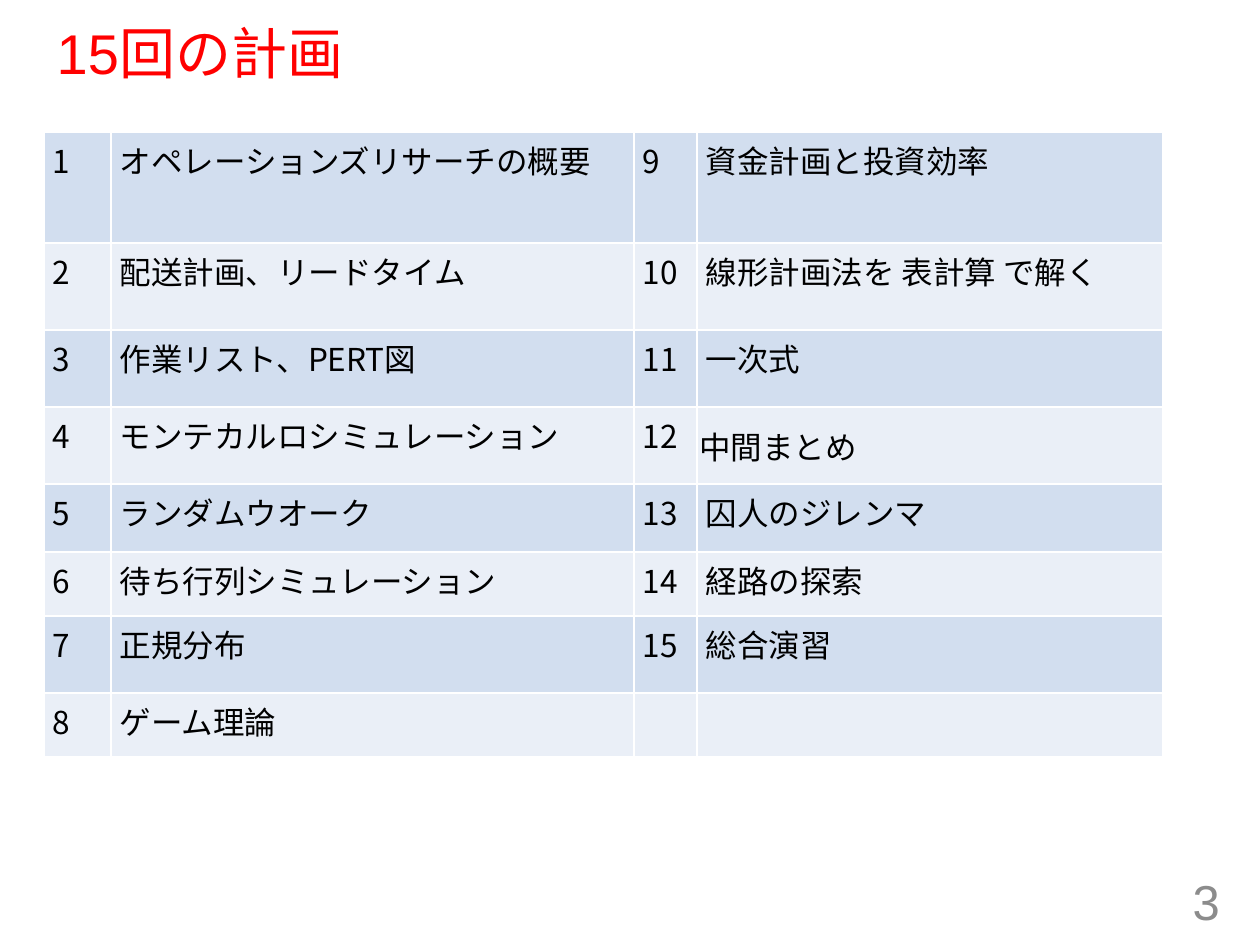
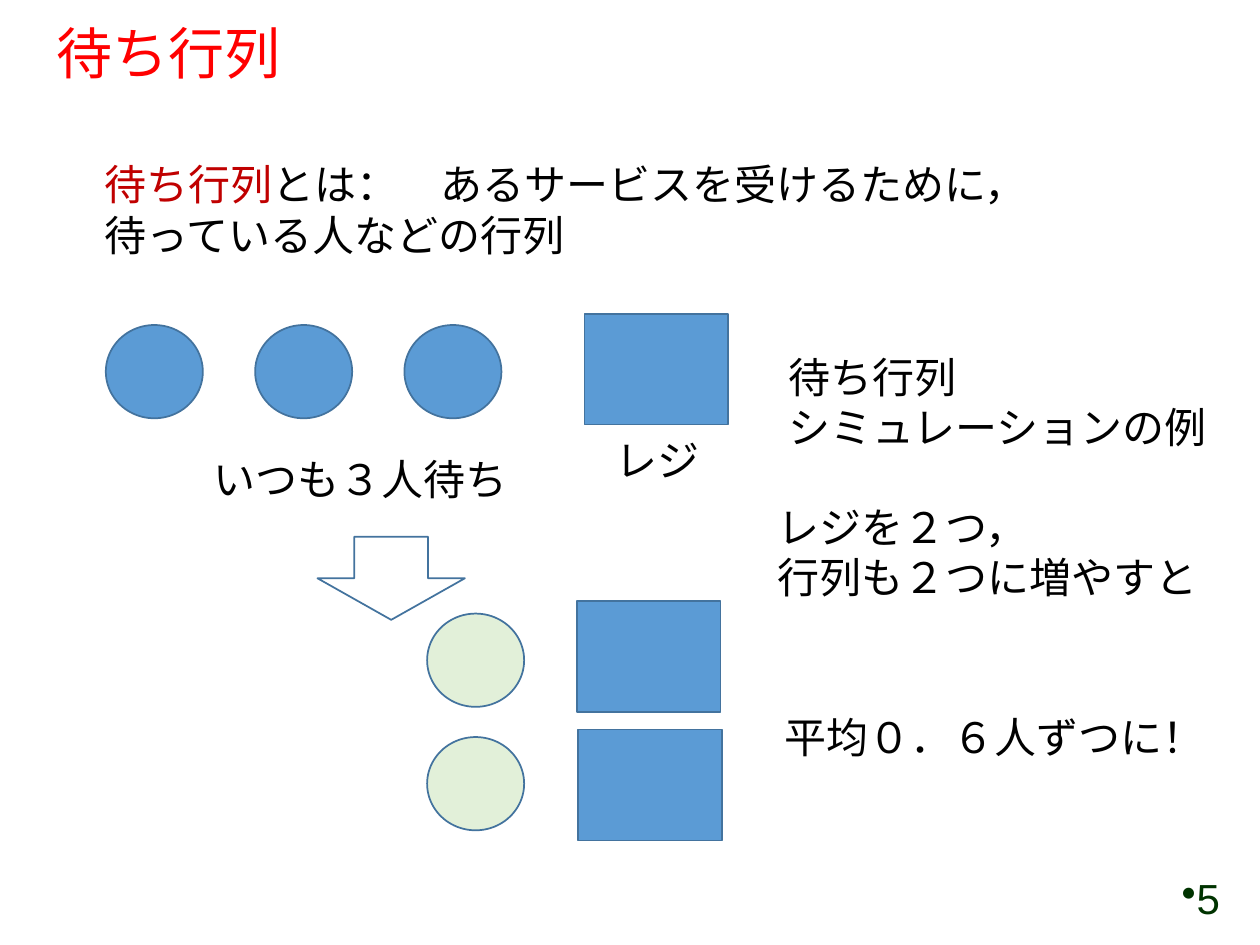
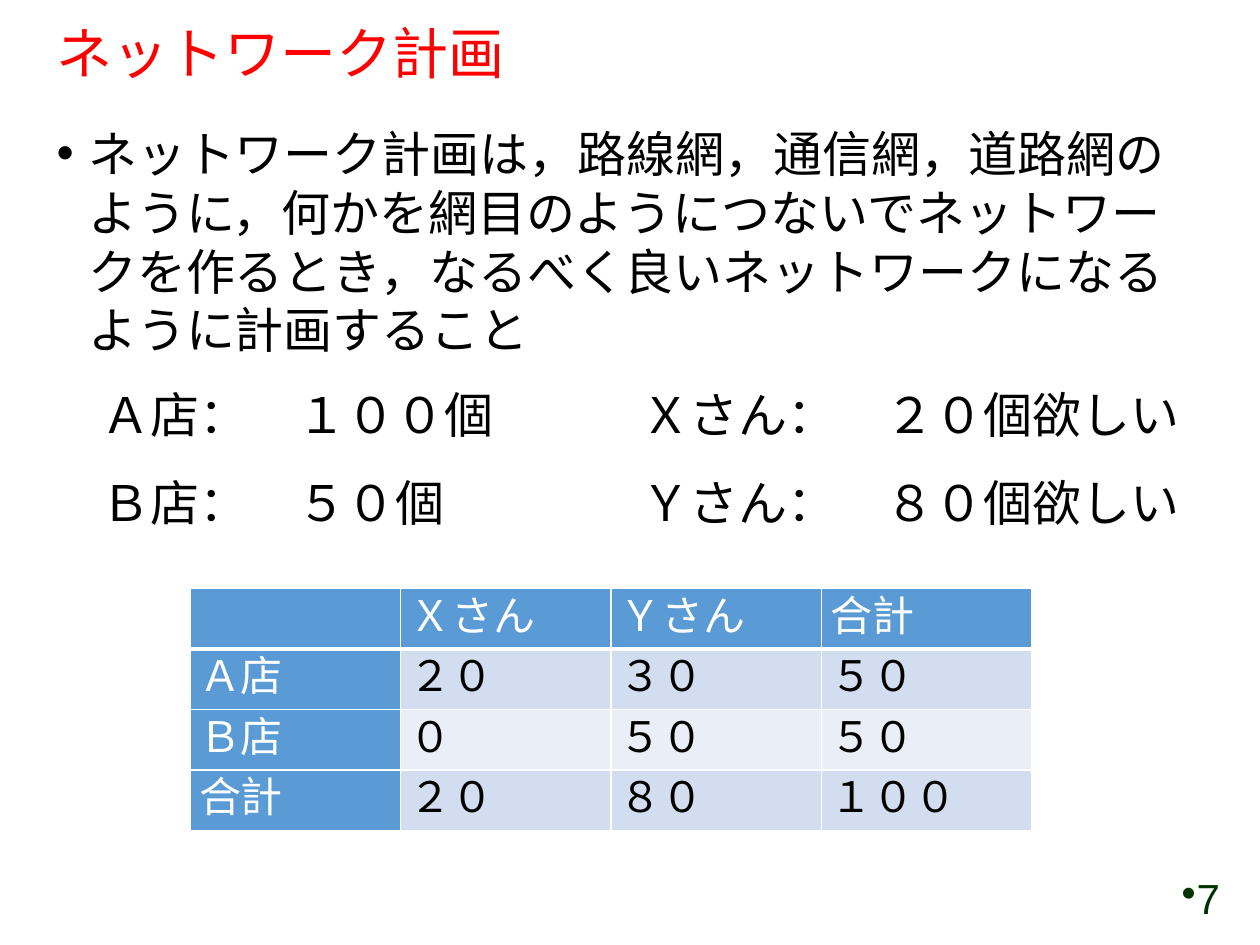
import pptx
import pptx.util
import pptx.dml.color
import pptx.enum.shapes
import pptx.enum.text
import pptx.oxml.ns
from lxml import etree

Inches = pptx.util.Inches
Pt = pptx.util.Pt
RGBColor = pptx.dml.color.RGBColor
Align = pptx.enum.text.PP_ALIGN
Anchor = pptx.enum.text.MSO_ANCHOR
Preset = pptx.enum.shapes.MSO_SHAPE
qn = pptx.oxml.ns.qn

WHITE = RGBColor(0xFF, 0xFF, 0xFF)
BLACK = RGBColor(0, 0, 0)
TITLE_RED = RGBColor(0xFF, 0, 0)
TERM_RED = RGBColor(0xC0, 0, 0)
NUMBER_GRAY = RGBColor(0x8C, 0x8C, 0x8C)
NUMBER_GREEN = RGBColor(0, 0x33, 0)
BLUE = RGBColor(0x5B, 0x9B, 0xD5)
OUTLINE_BLUE = RGBColor(0x43, 0x73, 0x9E)
PALE_GREEN = RGBColor(0xE2, 0xF0, 0xD9)
BANDS = [RGBColor(0xD2, 0xDE, 0xEF), RGBColor(0xEA, 0xEF, 0xF7)]


def write(paragraph, text, size=24, color=BLACK, font="Arial", align=Align.LEFT,
          line_spacing=1.0, before=0, bullet=False, indent=0, tab=None):
    """Append one formatted run to a paragraph and set the paragraph's format."""
    properties = paragraph._p.get_or_add_pPr()
    if bullet:
        properties.set("marL", str(Inches(indent)))
        properties.set("indent", str(-Inches(indent)))
        etree.SubElement(properties, qn("a:buChar"), char="•")
    if tab:
        tabs = etree.SubElement(properties, qn("a:tabLst"))
        etree.SubElement(tabs, qn("a:tab"), pos=str(Inches(tab)), algn="l")
    paragraph.alignment = align
    paragraph.line_spacing = line_spacing
    paragraph.space_before = Pt(before)
    run = paragraph.add_run()
    run.text = text
    run.font.size = Pt(size)
    run.font.color.rgb = color
    run.font.name = font
    east_asian = etree.SubElement(run._r.get_or_add_rPr(), qn("a:ea"))
    east_asian.set("typeface", font)


def add_grid(slide, left, top, widths, heights, rows, size, font, header=False):
    """Add a banded table with white borders; header colours the first row and column."""
    table = slide.shapes.add_table(
        len(rows), len(widths), Inches(left), Inches(top),
        Inches(sum(widths)), Inches(sum(heights))).table
    for column, width in zip(table.columns, widths):
        column.width = Inches(width)
    for row_index, (row, height) in enumerate(zip(rows, heights)):
        table.rows[row_index].height = Inches(height)
        for column_index, text in enumerate(row):
            cell = table.cell(row_index, column_index)
            is_header = header and (row_index == 0 or column_index == 0)
            cell.margin_left = cell.margin_right = Inches(0.07)
            cell.margin_top = cell.margin_bottom = Inches(0.04)
            for side in ("a:lnL", "a:lnR", "a:lnT", "a:lnB"):
                thick = header and row_index == 0 and side == "a:lnB"
                border = etree.SubElement(cell._tc.get_or_add_tcPr(), qn(side),
                                          w=str(Pt(3 if thick else 1)))
                fill = etree.SubElement(border, qn("a:solidFill"))
                etree.SubElement(fill, qn("a:srgbClr"), val=str(WHITE))
            cell.fill.solid()
            cell.fill.fore_color.rgb = (
                BLUE if is_header else BANDS[(row_index + header) % 2] if not header
                else BANDS[(row_index - 1) % 2])
            if text:
                write(cell.text_frame.paragraphs[0], text, size=size, font=font,
                      color=WHITE if is_header else BLACK)
    return table


presentation = pptx.Presentation()
presentation.slide_width = Inches(10)
presentation.slide_height = Inches(7.5)

# Titles and slide numbers
NUMBER_STYLE = dict(size=24, color=NUMBER_GREEN, line_spacing=0.9, bullet=True)
slides = []
for title_text, layout, number, number_style in [
    ("15回の計画", 5, "3", dict(size=28, color=NUMBER_GRAY)),
    ("待ち行列", 5, "5", NUMBER_STYLE),
    ("ネットワーク計画", 1, "7", NUMBER_STYLE),
]:
    slide = presentation.slides.add_slide(presentation.slide_layouts[layout])
    title = slide.shapes.title
    title.left, title.top = Inches(0.35), Inches(0.19)
    title.width, title.height = Inches(9.25), Inches(0.51)
    title.text_frame.auto_size = pptx.enum.text.MSO_AUTO_SIZE.NONE
    title.text_frame.vertical_anchor = Anchor.MIDDLE
    write(title.text_frame.paragraphs[0], title_text, size=32, color=TITLE_RED,
          line_spacing=0.9)
    number_box = slide.shapes.add_textbox(
        Inches(7.53), Inches(6.95), Inches(2.25), Inches(0.4))
    number_box.text_frame.word_wrap = True
    number_box.text_frame.vertical_anchor = Anchor.MIDDLE
    write(number_box.text_frame.paragraphs[0], number, align=Align.RIGHT, **number_style)
    slides.append(slide)
plan_slide, queue_slide, network_slide = slides

# Course plan: sessions 1-8 on the left, 9-15 on the right
topics = [
    "オペレーションズリサーチの概要", "配送計画、リードタイム", "作業リスト、PERT図",
    "モンテカルロシミュレーション", "ランダムウオーク", "待ち行列シミュレーション",
    "正規分布", "ゲーム理論", "資金計画と投資効率", "線形計画法を 表計算 で解く",
    "一次式", "中間まとめ", "囚人のジレンマ", "経路の探索", "総合演習",
]
sessions = [(str(number), topic) for number, topic in enumerate(topics, 1)] + [("", "")]
plan_table = add_grid(
    plan_slide, 0.35, 1.05, [0.53, 4.15, 0.5, 3.7],
    [0.88, 0.69, 0.61, 0.61, 0.54, 0.51, 0.61, 0.51],
    [first + second for first, second in zip(sessions[:8], sessions[8:])],
    size=18, font="Noto Sans CJK JP")
summary_cell = plan_table.cell(3, 3)
summary_cell.vertical_anchor = Anchor.MIDDLE
summary_cell.margin_left = summary_cell.margin_right = Inches(0.02)
summary_cell.margin_top, summary_cell.margin_bottom = Inches(0.03), Inches(0.02)

# Queue: three waiting at one register, then one at each of two registers
definition = queue_slide.shapes.add_textbox(
    Inches(0.73), Inches(1.21), Inches(7.87), Inches(0.91))
definition.text_frame.word_wrap = True
write(definition.text_frame.paragraphs[0], "待ち行列", color=TERM_RED)
write(definition.text_frame.paragraphs[0],
      "とは：\u3000あるサービスを受けるために，待っている人などの行列".replace("\u3000", "　"))

PERSON = (Preset.OVAL, 0.77, 0.74)
REGISTER = (Preset.RECTANGLE, 1.14, 0.88)
ARROW = (Preset.DOWN_ARROW, 1.17, 0.66)
for (preset, width, height), left, top, color in [
    *[(PERSON, 0.84 + 1.185 * place, 2.58, BLUE) for place in range(3)],
    (REGISTER, 4.64, 2.49, BLUE),
    (ARROW, 2.52, 4.26, None),
    (PERSON, 3.39, 4.87, PALE_GREEN),
    (REGISTER, 4.58, 4.77, BLUE),
    (PERSON, 3.39, 5.85, PALE_GREEN),
    (REGISTER, 4.59, 5.79, BLUE),
]:
    shape = queue_slide.shapes.add_shape(
        preset, Inches(left), Inches(top), Inches(width), Inches(height))
    shape.shadow.inherit = False
    if color is None:
        shape.fill.background()
    else:
        shape.fill.solid()
        shape.fill.fore_color.rgb = color
    shape.line.color.rgb = OUTLINE_BLUE
    shape.line.width = Pt(1)

for left, top, width, height, lines in [
    (1.6, 3.55, 2.56, 0.5, ["いつも３人待ち"]),
    (4.79, 3.4, 0.88, 0.5, ["レジ"]),
    (6.16, 2.74, 3.57, 0.91, ["待ち行列", "シミュレーションの例"]),
    (6.07, 3.93, 3.57, 0.91, ["レジを２つ，", "行列も２つに増やすと"]),
    (6.13, 5.6, 3.57, 0.5, ["平均０．６人ずつに！"]),
]:
    label = queue_slide.shapes.add_textbox(
        Inches(left), Inches(top), Inches(width), Inches(height))
    label.text_frame.word_wrap = False
    for index, line in enumerate(lines):
        paragraph = (label.text_frame.add_paragraph() if index
                     else label.text_frame.paragraphs[0])
        write(paragraph, line)

# Network planning: description, supply and demand, allocation table
body = network_slide.placeholders[1]
body.left, body.top = Inches(0.35), Inches(0.93)
body.width, body.height = Inches(9.25), Inches(5.83)
body.text_frame.auto_size = pptx.enum.text.MSO_AUTO_SIZE.NONE
write(body.text_frame.paragraphs[0],
      "ネットワーク計画は，路線網，通信網，道路網のように，何かを網目のように"
      "つないでネットワークを作るとき，なるべく良いネットワークになるように計画すること",
      size=28, bullet=True, indent=0.25)

supply = network_slide.shapes.add_textbox(
    Inches(0.71), Inches(2.91), Inches(8.9), Inches(0.92))
supply.text_frame.word_wrap = True
SUPPLY_STYLE = dict(size=28, line_spacing=1.2, tab=4.28)
write(supply.text_frame.paragraphs[0], "Ａ店：　１００個\tＸさん：　２０個欲しい",
      **SUPPLY_STYLE)
write(supply.text_frame.add_paragraph(), "Ｂ店：　５０個\tＹさん：　８０個欲しい",
      before=10, **SUPPLY_STYLE)

add_grid(
    network_slide, 1.51, 4.67, [1.67] * 4, [0.47] * 4,
    [["", "Ｘさん", "Ｙさん", "合計"],
     ["Ａ店", "２０", "３０", "５０"],
     ["Ｂ店", "０", "５０", "５０"],
     ["合計", "２０", "８０", "１００"]],
    size=24, font="Arial", header=True)

presentation.save("out.pptx")
